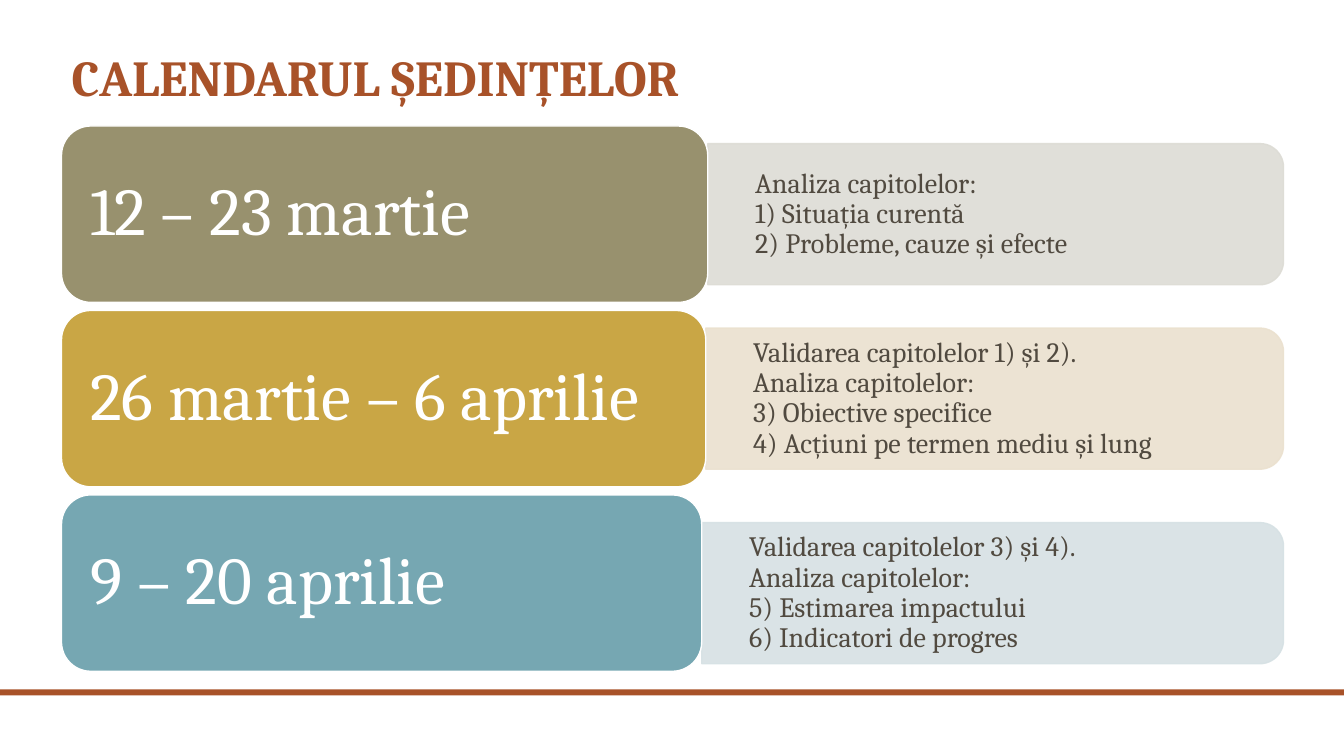
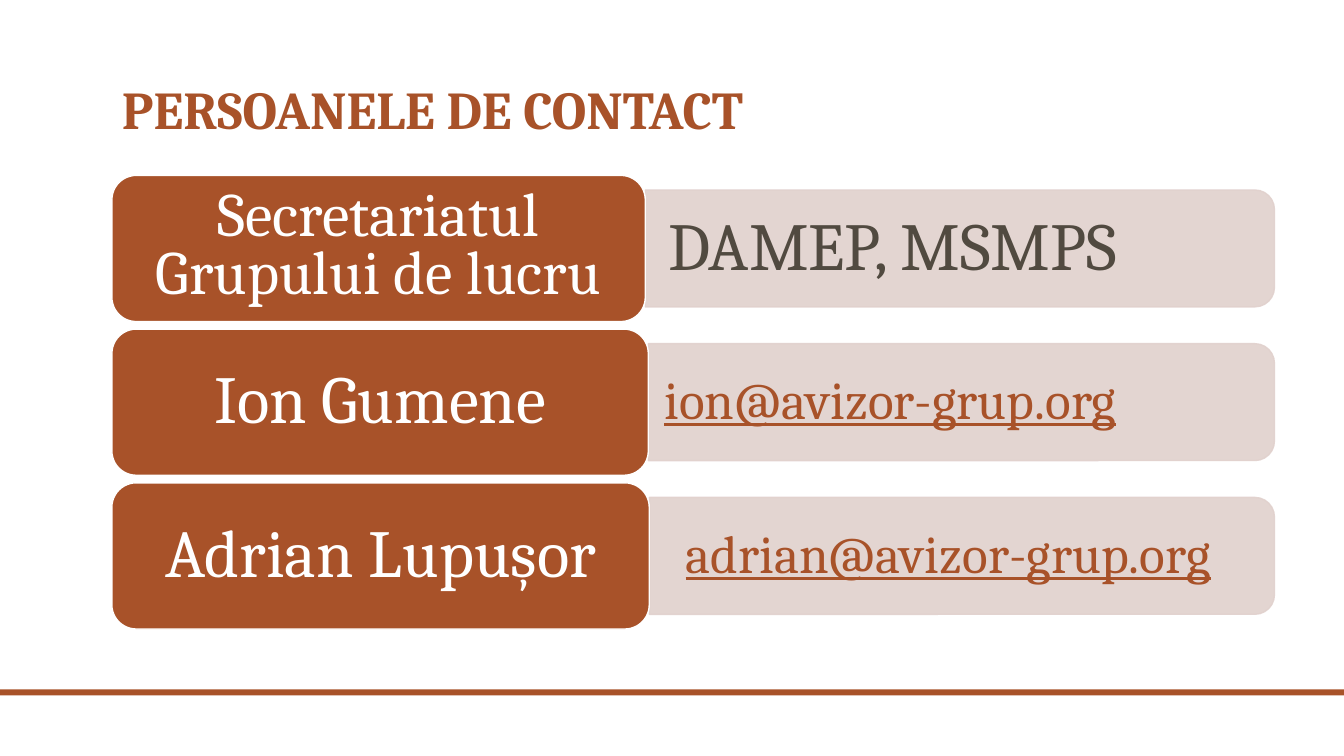
import pptx
import pptx.util
import pptx.dml.color
import pptx.enum.shapes
import pptx.enum.text
import pptx.oxml
import pptx.oxml.ns

Inches = pptx.util.Inches
RGBColor = pptx.dml.color.RGBColor
SHAPE = pptx.enum.shapes.MSO_SHAPE
ANCHOR = pptx.enum.text.MSO_ANCHOR
ALIGN = pptx.enum.text.PP_ALIGN

RUST = RGBColor(0xA8, 0x52, 0x29)
WHITE = RGBColor(0xFF, 0xFF, 0xFF)
INK = RGBColor(0x51, 0x4A, 0x40)
OLIVE = RGBColor(0x98, 0x91, 0x6E)
OLIVE_TINT = RGBColor(0xDD, 0xDC, 0xD5)
GOLD = RGBColor(0xC9, 0xA6, 0x45)
GOLD_TINT = RGBColor(0xEB, 0xE1, 0xCF)
TEAL = RGBColor(0x76, 0xA7, 0xB2)
TEAL_TINT = RGBColor(0xD6, 0xE1, 0xE4)
RUST_TINT = RGBColor(0xE1, 0xD1, 0xCD)

FONT = "Cambria"
LINE_SPACING = 0.9
EMAIL = {"size": 38, "color": RUST, "underline": True}
DETAIL = {"size": 20, "color": INK}

PAGES = [
    {
        "title": "CALENDARUL ȘEDINȚELOR", "title_size": 36,
        "title_box": (0.61, 0.32, 12.29, 0.8),
        "left": 0.61, "top": 1.25, "right": 12.73, "card_height": 1.75,
        "pitch": 1.83, "panel_height": 1.4, "align": ALIGN.LEFT,
        "rows": [
            {"label": "12 – 23 martie", "width": 6.41, "fill": OLIVE,
             "tint": OLIVE_TINT, "inset": 0.47, "format": DETAIL,
             "lines": ["Analiza capitolelor:", "1) Situația curentă",
                       "2) Probleme, cauze și efecte"]},
            {"label": "26 martie – 6 aprilie", "width": 6.39, "fill": GOLD,
             "tint": GOLD_TINT, "inset": 0.47, "format": DETAIL,
             "lines": ["Validarea capitolelor 1) și 2).", "Analiza capitolelor:",
                       "3) Obiective specifice",
                       "4) Acțiuni pe termen mediu și lung"]},
            {"label": "9 – 20 aprilie", "width": 6.35, "fill": TEAL,
             "tint": TEAL_TINT, "inset": 0.47, "format": DETAIL,
             "panel_shift": 0.1,
             "lines": ["Validarea capitolelor 3) și 4).", "Analiza capitolelor:",
                       "5) Estimarea impactului", "6) Indicatori de progres"]},
        ],
    },
    {
        "title": "PERSOANELE DE CONTACT", "title_size": 38,
        "title_box": (1.11, 0.64, 11.52, 0.81),
        "left": 1.11, "top": 1.74, "right": 12.64, "card_height": 1.45,
        "pitch": 1.525, "panel_height": 1.16, "align": ALIGN.CENTER,
        "rows": [
            {"label": "Secretariatul Grupului de lucru", "width": 5.29,
             "label_size": 44, "label_spacing": 0.78, "fill": RUST,
             "tint": RUST_TINT, "inset": 0.23,
             "format": {"size": 48, "color": INK}, "lines": ["DAMEP, MSMPS"]},
            {"label": "Ion Gumene", "width": 5.32, "fill": RUST,
             "tint": RUST_TINT, "inset": 0.16, "format": EMAIL,
             "lines": ["ion@avizor-grup.org"]},
            {"label": "Adrian Lupușor", "width": 5.33, "fill": RUST,
             "tint": RUST_TINT, "inset": 0.36, "format": EMAIL,
             "lines": ["adrian@avizor-grup.org"]},
        ],
    },
]


def place(shape, box):
    for name, value in zip(("left", "top", "width", "height"), box):
        setattr(shape, name, Inches(value))


def write(shape, lines, size, color, align=ALIGN.LEFT, anchor=ANCHOR.MIDDLE,
          inset=0.1, right=0.1, spacing=LINE_SPACING, **font_format):
    frame = shape.text_frame
    frame_format = {
        "word_wrap": True, "auto_size": pptx.enum.text.MSO_AUTO_SIZE.NONE,
        "vertical_anchor": anchor, "margin_left": Inches(inset),
        "margin_right": Inches(right), "margin_top": Inches(0.05),
        "margin_bottom": Inches(0.05),
    }
    for name, value in frame_format.items():
        setattr(frame, name, value)
    for index, line in enumerate(lines):
        para = frame.add_paragraph() if index else frame.paragraphs[0]
        para.alignment = align
        para.line_spacing = spacing
        span = para.add_run()
        span.text = line
        span.font.color.rgb = color
        values = {"name": FONT, "size": pptx.util.Pt(size), **font_format}
        for name, value in values.items():
            setattr(span.font, name, value)


def add_block(page, kind, box, fill, line=None):
    block = page.shapes.add_shape(kind, *map(Inches, box))
    block.shadow.inherit = False
    block.fill.solid()
    block.fill.fore_color.rgb = fill
    if line is None:
        block.line.fill.background()
    else:
        block.line.color.rgb = line
        block.line.width = pptx.util.Pt(1)
    return block


def add_panel(page, left, top, width, height, tint):
    box = (left + (width - height) / 2, top + (height - width) / 2, height, width)
    panel = add_block(page, SHAPE.ROUND_2_SAME_RECTANGLE, box, tint, tint)
    panel.rotation = 90
    for color in panel.element.iter(pptx.oxml.ns.qn("a:srgbClr")):
        alpha = pptx.oxml.parse_xml(
            f'<a:alpha {pptx.oxml.ns.nsdecls("a")} val="90000"/>')
        color.append(alpha)


def add_row(page, content, row, index):
    top = content["top"] + index * content["pitch"]
    height = content["panel_height"]
    panel_left = content["left"] + row["width"]
    panel_top = (top + (content["card_height"] - height) / 2
                 + row.get("panel_shift", 0))
    panel_box = (panel_left, panel_top, content["right"] - panel_left, height)
    add_panel(page, *panel_box, row["tint"])
    details = page.shapes.add_textbox(*map(Inches, panel_box))
    write(details, row["lines"], inset=row["inset"], **row["format"])

    card_box = (content["left"], top, row["width"], content["card_height"])
    card = add_block(page, SHAPE.ROUNDED_RECTANGLE, card_box, row["fill"], WHITE)
    write(card, [row["label"]], row.get("label_size", 48), WHITE,
          align=content["align"], inset=0.2, right=0.2,
          spacing=row.get("label_spacing", LINE_SPACING))


def add_page(deck, content):
    page = deck.slides.add_slide(deck.slide_layouts[5])
    title = page.shapes.title
    place(title, content["title_box"])
    write(title, [content["title"]], content["title_size"], RUST,
          anchor=ANCHOR.BOTTOM, bold=True)
    for index, row in enumerate(content["rows"]):
        add_row(page, content, row, index)
    return page


def main():
    deck = pptx.Presentation()
    deck.slide_width = Inches(13.33)
    deck.slide_height = Inches(7.5)
    pages = [add_page(deck, content) for content in PAGES]
    band = add_block(pages[0], SHAPE.RECTANGLE, (0, 6.84, 13.33, 0.06), RUST)
    deck.slide_master.shapes.element.append(band.element)
    deck.save("out.pptx")


if __name__ == "__main__":
    main()
